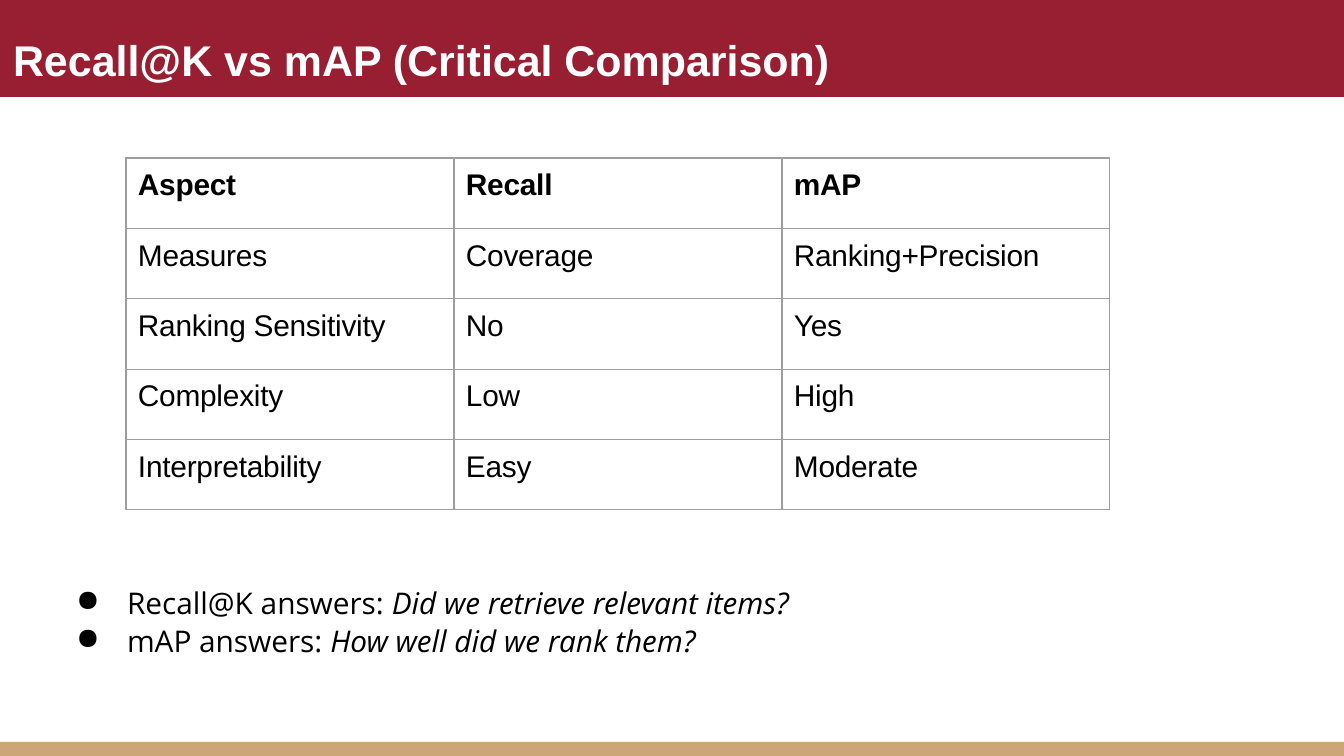
from lxml.etree import SubElement
from pptx import Presentation
from pptx.dml.color import RGBColor
from pptx.enum.shapes import MSO_SHAPE
from pptx.enum.text import MSO_ANCHOR, MSO_AUTO_SIZE, PP_ALIGN
from pptx.oxml.ns import qn
from pptx.util import Emu, Pt

SCALE = 914400 / 134.4
CRIMSON, TAN, GRAY, BLACK, WHITE = "981E31", "CCA677", "9E9E9E", "000000", "FFFFFF"


def px(length):
    return Emu(round(length * SCALE))


def rgb(color):
    return RGBColor.from_string(color)


def add_text(paragraph, text, size=16, font="Arial", color=BLACK, bold=False, italic=False, spacing=0):
    run = paragraph.add_run()
    run.text = text
    run.font.size = Pt(size)
    run.font.name = font
    run.font.color.rgb = rgb(color)
    run.font.bold = bold
    run.font.italic = italic
    if spacing:
        run._r.get_or_add_rPr().set("spc", str(round(spacing * 100)))


def indent(paragraph, left, first=0):
    properties = paragraph._p.get_or_add_pPr()
    properties.set("marL", str(px(left)))
    properties.set("indent", str(px(first)))
    paragraph.alignment = PP_ALIGN.LEFT
    return properties


class ComparisonSlide:
    def __init__(self, deck):
        self.slide = deck.slides.add_slide(deck.slide_layouts[5])
        self.shapes = self.slide.shapes
        self.slide.background.fill.solid()
        self.slide.background.fill.fore_color.rgb = rgb(WHITE)

    def band(self, top, height, color):
        band = self.shapes.add_shape(MSO_SHAPE.RECTANGLE, 0, px(top), px(1344), px(height))
        band.shadow.inherit = False
        band.fill.solid()
        band.fill.fore_color.rgb = rgb(color)
        band.line.fill.background()
        return band

    def frame(self, shape, top_inset):
        frame = shape.text_frame
        frame.margin_left = frame.margin_right = frame.margin_bottom = 0
        frame.margin_top = px(top_inset)
        frame.vertical_anchor = MSO_ANCHOR.TOP
        frame.word_wrap = True
        frame.auto_size = MSO_AUTO_SIZE.SHAPE_TO_FIT_TEXT
        return frame

    def title(self, text, header):
        title = self.shapes.title
        title.left, title.top, title.width, title.height = px(9), px(22), px(1138), px(75)
        header.element.addnext(title.element)
        paragraph = self.frame(title, 12).paragraphs[0]
        indent(paragraph, 4)
        add_text(paragraph, text, size=23, color=WHITE, bold=True)

    def bullets(self, answers):
        box = self.shapes.add_textbox(px(73), px(579), px(722), px(79))
        frame = self.frame(box, 6)
        for index, (measure, question) in enumerate(answers):
            paragraph = frame.add_paragraph() if index else frame.paragraphs[0]
            properties = indent(paragraph, 54, -51)
            SubElement(properties, qn("a:buChar"), char="●")
            tabs = SubElement(properties, qn("a:tabLst"))
            SubElement(tabs, qn("a:tab"), pos=str(px(54)), algn="l")
            paragraph.line_spacing = Pt(19.2)
            if index:
                paragraph.space_before = Pt(0.9)
            add_text(paragraph, measure, font="Open Sans")
            add_text(paragraph, question, font="Open Sans", italic=True)

    def borders(self, cell):
        properties = cell._tc.get_or_add_tcPr()
        for side in ("lnL", "lnR", "lnT", "lnB"):
            line = SubElement(properties, qn(f"a:{side}"), w=str(Pt(0.75)))
            fill = SubElement(line, qn("a:solidFill"))
            SubElement(fill, qn("a:srgbClr"), val=GRAY)

    def table(self, rows):
        table = self.shapes.add_table(
            len(rows), len(rows[0]), px(126), px(158), px(984), px(352)
        ).table
        table.first_row = table.horz_banding = False
        for row_index, row in enumerate(rows):
            for column_index, text in enumerate(row):
                cell = table.cell(row_index, column_index)
                cell.margin_left = cell.margin_right = cell.margin_bottom = 0
                cell.margin_top = px(11)
                self.borders(cell)
                cell.fill.background()
                paragraph = cell.text_frame.paragraphs[0]
                indent(paragraph, 12)
                add_text(paragraph, text, bold=row_index == 0, spacing=-0.1)


def main():
    deck = Presentation()
    deck.slide_width, deck.slide_height = px(1344), px(756)
    comparison = ComparisonSlide(deck)
    comparison.band(742, 14, TAN)
    comparison.bullets([
        ("Recall@K answers: ", "Did we retrieve relevant items?"),
        ("mAP answers: ", "How well did we rank them?"),
    ])
    header = comparison.band(0, 97, CRIMSON)
    comparison.title("Recall@K vs mAP (Critical Comparison)", header)
    comparison.table([
        ("Aspect", "Recall", "mAP"),
        ("Measures", "Coverage", "Ranking+Precision"),
        ("Ranking Sensitivity", "No", "Yes"),
        ("Complexity", "Low", "High"),
        ("Interpretability", "Easy", "Moderate"),
    ])
    deck.save("out.pptx")


if __name__ == "__main__":
    main()
